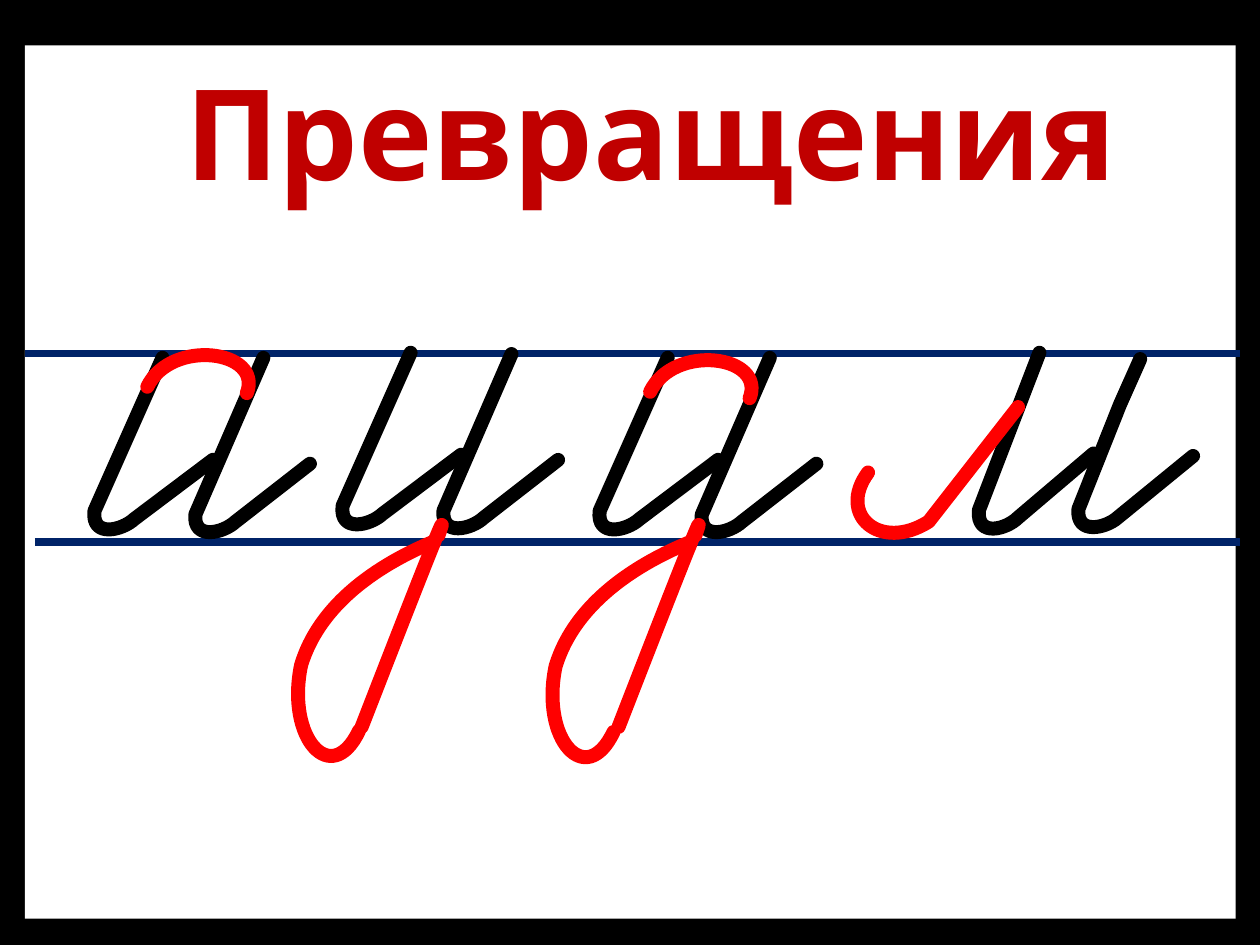
from pptx import Presentation
from pptx.dml.color import RGBColor
from pptx.enum.shapes import MSO_CONNECTOR, MSO_SHAPE
from pptx.enum.text import MSO_ANCHOR, PP_ALIGN
from pptx.oxml.ns import qn
from pptx.oxml.xmlchemy import OxmlElement
from pptx.util import Pt

STRAIGHT = MSO_CONNECTOR.STRAIGHT
RECTANGLE = MSO_SHAPE.RECTANGLE
MIDDLE = MSO_ANCHOR.MIDDLE
CENTER = PP_ALIGN.CENTER

BLACK = RGBColor(0, 0, 0)
WHITE = RGBColor(255, 255, 255)
NAVY = RGBColor(0x00, 0x23, 0x68)
CRIMSON = RGBColor(0xC0, 0, 0)
RED = RGBColor(255, 0, 0)

FIRST_HOOK = [
    [(38.9, 0)], [(0, 87.5)],
    [(-1.8, 103), (15.8, 98.6), (22.7, 92.2)], [(67.7, 58.3)],
]
SECOND_HOOK = [
    [(38.9, 0)], [(0, 89.6)],
    [(-1.2, 104.4), (16, 100.1), (23, 93.6)], [(65.5, 60.5)],
]
M_FIRST_HOOK = [
    [(34.6, 0)], [(0, 90)],
    [(-1.4, 105.8), (15.8, 100.8), (22.3, 94.3)], [(65.5, 57.6)],
]
M_SECOND_HOOK = [
    [(35.3, 0)], [(33.1, 5), (30.2, 11.5), (23.8, 25.9)], [(0, 85.7)],
    [(-1.4, 100.8), (15.8, 96.5), (22.3, 90.7)], [(65.5, 55.4)],
]
M_LEAD = [
    [(0, 0)], [(-51.1, 65.5)],
    [(-78.5, 82.8), (-103.7, 61.9), (-85.7, 37.4)],
]
TOP_ARC = [[(0, 0)], [(13.7, -28), (66.2, -20.9), (56.9, 3.6)]]
TAIL_LOOP = [
    [(0, 0)], [(-15.8, 33.1), (-41.8, 4.3), (-33.1, -37.4)],
    [(-21.6, -75.6), (16.6, -97.2), (42.5, -108)],
]
TAIL_STEM = [[(0, 0)], [(9.4, -27.4), (-17.3, 41), (-43.9, 109.4)]]

STROKES = [
    (TAIL_LOOP, 205.2, 417.6, RED),
    (FIRST_HOOK, 195.8, 201.6, BLACK),
    (SECOND_HOOK, 253.4, 202.3, BLACK),
    (TAIL_LOOP, 350.6, 418.3, RED),
    (M_FIRST_HOOK, 559.4, 201.6, BLACK),
    (M_SECOND_HOOK, 616.3, 205.2, BLACK),
    (M_LEAD, 581.8, 232.6, RED),
    (FIRST_HOOK, 342.7, 204.5, BLACK),
    (SECOND_HOOK, 401, 204.5, BLACK),
    (FIRST_HOOK, 54, 204.5, BLACK),
    (SECOND_HOOK, 111.6, 204.5, BLACK),
    (TOP_ARC, 84.2, 221, RED),
    (TAIL_STEM, 250.6, 306, RED),
    (TOP_ARC, 371.5, 223.9, RED),
    (TAIL_STEM, 397.4, 306, RED),
]


class CopybookSlide:
    font_name = "Open Sans"
    title_size = Pt(72)
    rule_width = Pt(4.25)
    pen_width = Pt(8)

    def __init__(self, presentation, background):
        self.slide = presentation.slides.add_slide(presentation.slide_layouts[6])
        fill = self.slide.background.fill
        fill.solid()
        fill.fore_color.rgb = background

    def page(self, left, top, width, height, color):
        shape = self.slide.shapes.add_shape(
            RECTANGLE, Pt(left), Pt(top), Pt(width), Pt(height))
        shape.shadow.inherit = False
        shape.fill.solid()
        shape.fill.fore_color.rgb = color
        shape.line.fill.background()

    def rule(self, left, right, y, color):
        connector = self.slide.shapes.add_connector(
            STRAIGHT, Pt(left), Pt(y), Pt(right), Pt(y))
        connector.line.color.rgb = color
        connector.line.width = self.rule_width
        connector.element.spPr.append(OxmlElement("a:effectLst"))

    def title(self, text, left, top, width, height, color):
        frame = self.slide.shapes.add_textbox(
            Pt(left), Pt(top), Pt(width), Pt(height)).text_frame
        frame.word_wrap = True
        frame.vertical_anchor = MIDDLE
        paragraph = frame.paragraphs[0]
        paragraph.text = text
        paragraph.alignment = CENTER
        paragraph.font.name = self.font_name
        paragraph.font.size = self.title_size
        paragraph.font.bold = True
        paragraph.font.color.rgb = color

    def stroke(self, segments, left, top, color):
        points = [(Pt(left + x), Pt(top + y))
                  for segment in segments for x, y in segment]
        builder = self.slide.shapes.build_freeform(*points[0])
        builder.add_line_segments(points[1:], close=False)
        shape = builder.convert_to_shape()
        self.bend(shape, segments[1:])
        shape.shadow.inherit = False
        shape.fill.background()
        shape.line.color.rgb = color
        shape.line.width = self.pen_width
        shape.element.spPr.find(qn("a:ln")).set("cap", "rnd")

    def bend(self, shape, segments):
        lines = iter(list(shape.element.iter(qn("a:lnTo"))))
        for segment in segments:
            parts = [next(lines) for _ in segment]
            if len(parts) == 3:
                curve = OxmlElement("a:cubicBezTo")
                parts[0].addprevious(curve)
                for part in parts:
                    curve.append(part[0])
                    part.getparent().remove(part)


def main():
    presentation = Presentation()
    presentation.slide_width = Pt(720)
    presentation.slide_height = Pt(540)
    copybook = CopybookSlide(presentation, BLACK)
    copybook.page(14.2, 26, 692, 499, WHITE)
    copybook.rule(14.2, 708.5, 202, NAVY)
    copybook.rule(20, 708.5, 309.6, NAVY)
    copybook.title("Превращения", 48, 49, 648, 51, CRIMSON)
    for segments, left, top, color in STROKES:
        copybook.stroke(segments, left, top, color)
    presentation.save("out.pptx")


if __name__ == "__main__":
    main()
